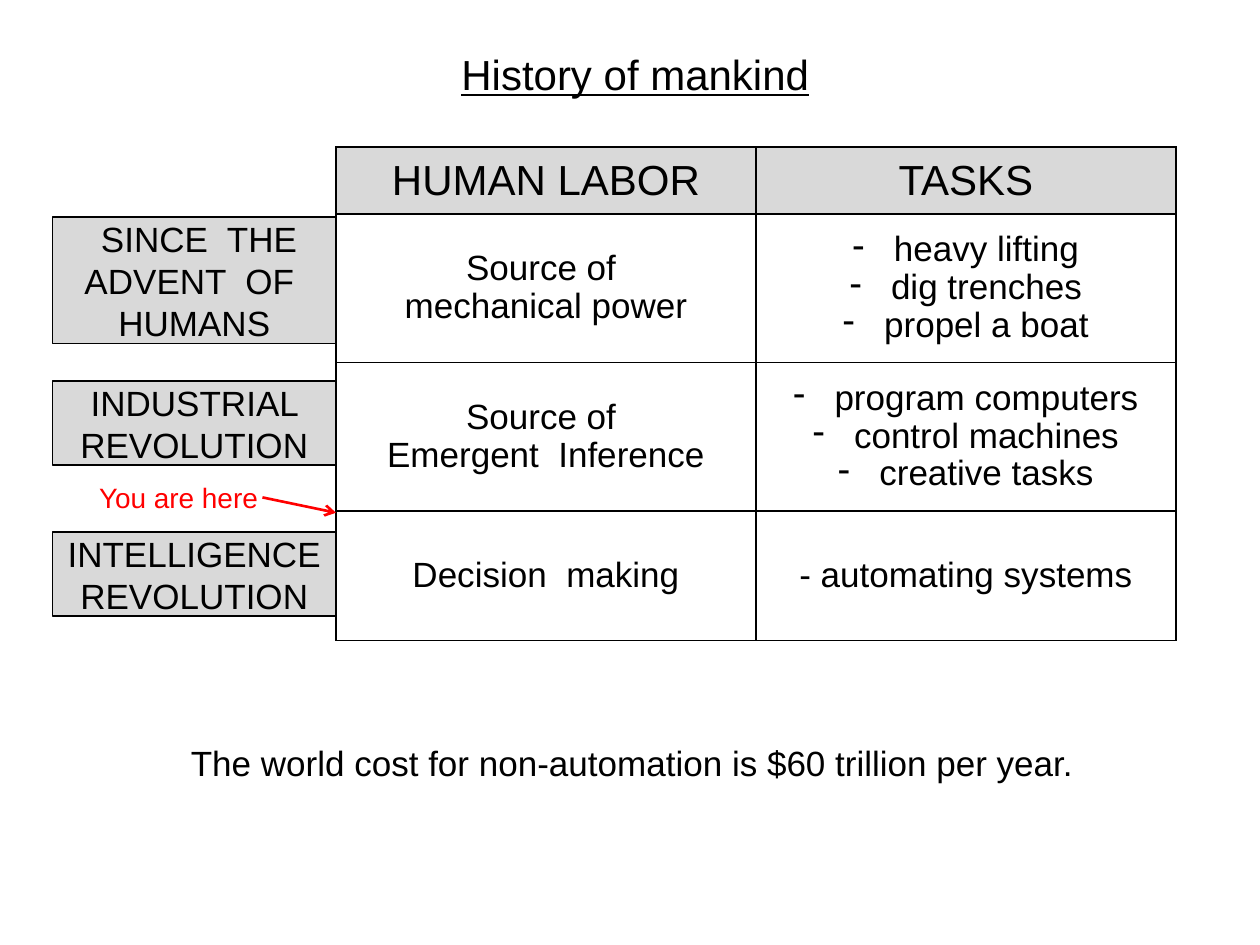
"""Build the History of mankind slide with its table of eras, labor and tasks."""
from lxml.etree import SubElement
from pptx import Presentation
from pptx.dml.color import RGBColor
from pptx.enum.shapes import MSO_CONNECTOR, MSO_SHAPE
from pptx.enum.text import MSO_ANCHOR, PP_ALIGN
from pptx.oxml.ns import qn
from pptx.util import Pt

COLORS = {"ink": "000000", "header": "D9D9D9", "paper": "FFFFFF", "marker": "FF0000"}


def color(name):
    return RGBColor.from_string(COLORS[name])


def write(frame, lines, size, ink="ink", align=PP_ALIGN.CENTER, spacing=None, inset=None):
    frame.word_wrap = True
    if inset is not None:
        frame.margin_left = frame.margin_right = frame.margin_top = frame.margin_bottom = inset
    for index, line in enumerate(lines):
        paragraph = frame.add_paragraph() if index else frame.paragraphs[0]
        paragraph.alignment = align
        if spacing:
            paragraph.line_spacing = spacing
        run = paragraph.add_run()
        run.text = line
        run.font.name = "Arial"
        run.font.size = Pt(size)
        run.font.color.rgb = color(ink)


prs = Presentation()
prs.slide_width, prs.slide_height = Pt(720), Pt(540)
slide = prs.slides.add_slide(prs.slide_layouts[5])

title = slide.shapes.title
title.left, title.top, title.width, title.height = Pt(240), Pt(24), Pt(246), Pt(36)
write(title.text_frame, ["History of mankind"], 24)
title.text_frame.vertical_anchor = MSO_ANCHOR.TOP
title.text_frame.paragraphs[0].runs[0].font.underline = True

rows = [
    (["HUMAN LABOR"], ["TASKS"]),
    (["Source of ", "mechanical power"], [" heavy lifting", " dig trenches", " propel a boat"]),
    (["Source of ", "Emergent  Inference"],
     [" program computers", " control machines", " creative tasks"]),
    (["Decision  making"], ["- automating systems"]),
]
row_heights = [38.4, 84.8, 84.8, 74]
eras = slide.shapes.add_table(4, 2, Pt(192), Pt(84), Pt(480), Pt(282)).table
for column in eras.columns:
    column.width = Pt(240)
for row_index, (row, height) in enumerate(zip(rows, row_heights)):
    eras.rows[row_index].height = Pt(height)
    for column_index, lines in enumerate(row):
        cell = eras.cell(row_index, column_index)
        cell.vertical_anchor = MSO_ANCHOR.MIDDLE
        write(cell.text_frame, lines, 20 if row_index else 24, spacing=0.97 if row_index else None)
        if len(lines) == 3:
            for paragraph in cell.text_frame.paragraphs:
                properties = paragraph._p.get_or_add_pPr()
                properties.set("marL", str(Pt(18)))
                properties.set("indent", str(-Pt(18)))
                SubElement(properties, qn("a:buChar"), char="-")
        cell_properties = cell._tc.get_or_add_tcPr()
        for edge in ("a:lnL", "a:lnR", "a:lnT", "a:lnB"):
            border = SubElement(cell_properties, qn(edge), w=str(Pt(1)))
            border_fill = SubElement(border, qn("a:solidFill"))
            SubElement(border_fill, qn("a:srgbClr"), val=COLORS["ink"])
        cell.fill.solid()
        cell.fill.fore_color.rgb = color("paper" if row_index else "header")

for lines, top, height in [
    ([" SINCE  THE", "ADVENT  OF  HUMANS"], 124, 72.5),
    ([" INDUSTRIAL  REVOLUTION"], 217.75, 48),
    (["INTELLIGENCE", "REVOLUTION"], 304, 48),
]:
    era = slide.shapes.add_shape(MSO_SHAPE.RECTANGLE, Pt(30), Pt(top), Pt(162), Pt(height))
    era.shadow.inherit = False
    era.fill.solid()
    era.fill.fore_color.rgb = color("header")
    era.line.color.rgb = color("ink")
    era.line.width = Pt(0.75)
    write(era.text_frame, lines, 20, spacing=Pt(24), inset=0)

cost = slide.shapes.add_textbox(Pt(102), Pt(420), Pt(520), Pt(30))
write(cost.text_frame, ["The world cost for non-automation is $60 trillion per year."], 20,
      align=PP_ALIGN.LEFT)

here = slide.shapes.add_textbox(Pt(54), Pt(274.5), Pt(96), Pt(19.5))
write(here.text_frame, ["You are here"], 16, ink="marker", inset=0)

pointer = slide.shapes.add_connector(MSO_CONNECTOR.STRAIGHT, Pt(150), Pt(284.25), Pt(192), Pt(293))
pointer.line.color.rgb = color("marker")
pointer.line.width = Pt(1.5)
SubElement(pointer.line._get_or_add_ln(), qn("a:tailEnd"), type="arrow")
SubElement(pointer._element.spPr, qn("a:effectLst"))

prs.save("out.pptx")
